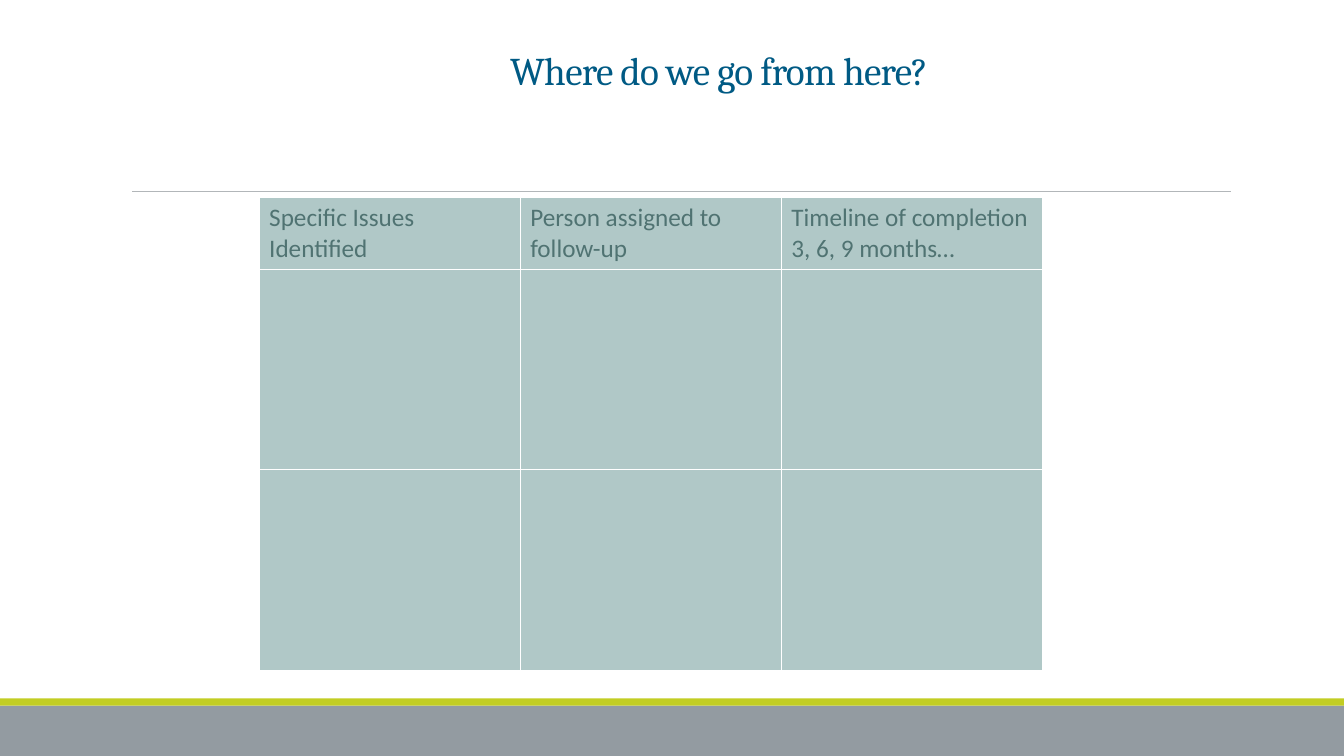
from pptx import Presentation
from pptx.dml.color import RGBColor
from pptx.enum.shapes import MSO_CONNECTOR, MSO_SHAPE
from pptx.enum.text import MSO_ANCHOR, PP_ALIGN
from pptx.oxml.ns import qn
from pptx.util import Inches, Pt
from lxml.etree import SubElement

WHITE = RGBColor(0xFF, 0xFF, 0xFF)
NAVY = RGBColor(0x00, 0x5A, 0x84)
TEAL = RGBColor(0x50, 0x73, 0x72)
PALE_TEAL = RGBColor(0xB0, 0xC8, 0xC7)
GREY = RGBColor(0x93, 0x9B, 0xA1)
LINE_GREY = RGBColor(0xB2, 0xB6, 0xB9)
LIME = RGBColor(0xC2, 0xCD, 0x23)

TITLE_FONT = {"name": "Cambria", "size": Pt(28), "bold": False}
HEADER_FONT = {"name": "Calibri", "size": Pt(18), "bold": False}
HEADERS = [
    ["Specific Issues Identified"],
    ["Person assigned to follow-up"],
    ["Timeline of completion", "3, 6, 9 months…"],
]
COLUMN_WIDTH = 2.59
ROW_HEIGHTS = [0.71, 1.99, 1.99]


def write(para, text, font_values, color):
    span = para.add_run()
    span.text = text
    for name, value in font_values.items():
        setattr(span.font, name, value)
    span.font.color.rgb = color
    return span


def add_band(page, top, height, color):
    band = page.shapes.add_shape(
        MSO_SHAPE.RECTANGLE, 0, Inches(top), Inches(13.33), Inches(height))
    band.shadow.inherit = False
    band.fill.solid()
    band.fill.fore_color.rgb = color
    band.line.fill.background()


def add_rule(page, left, right, top):
    rule = page.shapes.add_connector(
        MSO_CONNECTOR.STRAIGHT, Inches(left), Inches(top), Inches(right), Inches(top))
    rule.line.color.rgb = LINE_GREY
    rule.line.width = Pt(1)
    SubElement(rule._element.spPr, qn("a:effectLst"))


def set_title(page, text):
    title = page.shapes.title
    place = {"left": 4.96, "top": 0.46, "width": 6.71, "height": 0.52}
    for name, value in place.items():
        setattr(title, name, Inches(value))
    title.text_frame.vertical_anchor = MSO_ANCHOR.BOTTOM
    title.text_frame.word_wrap = True
    para = title.text_frame.paragraphs[0]
    para.alignment = PP_ALIGN.LEFT
    para.line_spacing = 0.85
    span = write(para, text, TITLE_FONT, NAVY)
    span.font._element.set("spc", "-50")


def style_cell(cell):
    # Borders come before the fill in the cell properties
    properties = cell._tc.get_or_add_tcPr()
    for side in ("lnL", "lnR", "lnT", "lnB"):
        border = SubElement(properties, qn(f"a:{side}"), w=str(Pt(1)))
        fill = SubElement(border, qn("a:solidFill"))
        SubElement(fill, qn("a:srgbClr"), val=str(WHITE))
    cell.fill.solid()
    cell.fill.fore_color.rgb = PALE_TEAL


def add_plan_table(page):
    frame = page.shapes.add_table(
        len(ROW_HEIGHTS), len(HEADERS), Inches(2.57), Inches(1.96),
        Inches(COLUMN_WIDTH * len(HEADERS)), Inches(sum(ROW_HEIGHTS)))
    table = frame.table
    for column in table.columns:
        column.width = Inches(COLUMN_WIDTH)
    for row, height in zip(table.rows, ROW_HEIGHTS):
        row.height = Inches(height)
    for cell in table.iter_cells():
        style_cell(cell)
    for index, lines in enumerate(HEADERS):
        box = table.cell(0, index).text_frame
        for number, line in enumerate(lines):
            para = box.add_paragraph() if number else box.paragraphs[0]
            write(para, line, HEADER_FONT, TEAL)


def main():
    deck = Presentation()
    deck.slide_width, deck.slide_height = Inches(13.33), Inches(7.5)
    page = deck.slides.add_slide(deck.slide_layouts[5])

    # Footer bands and rule under the title
    add_band(page, 7, 0.5, GREY)
    add_band(page, 6.93, 0.07, LIME)
    add_rule(page, 1.31, 12.21, 1.9)

    # Title and action plan
    set_title(page, "Where do we go from here?")
    add_plan_table(page)

    deck.save("out.pptx")


if __name__ == "__main__":
    main()
